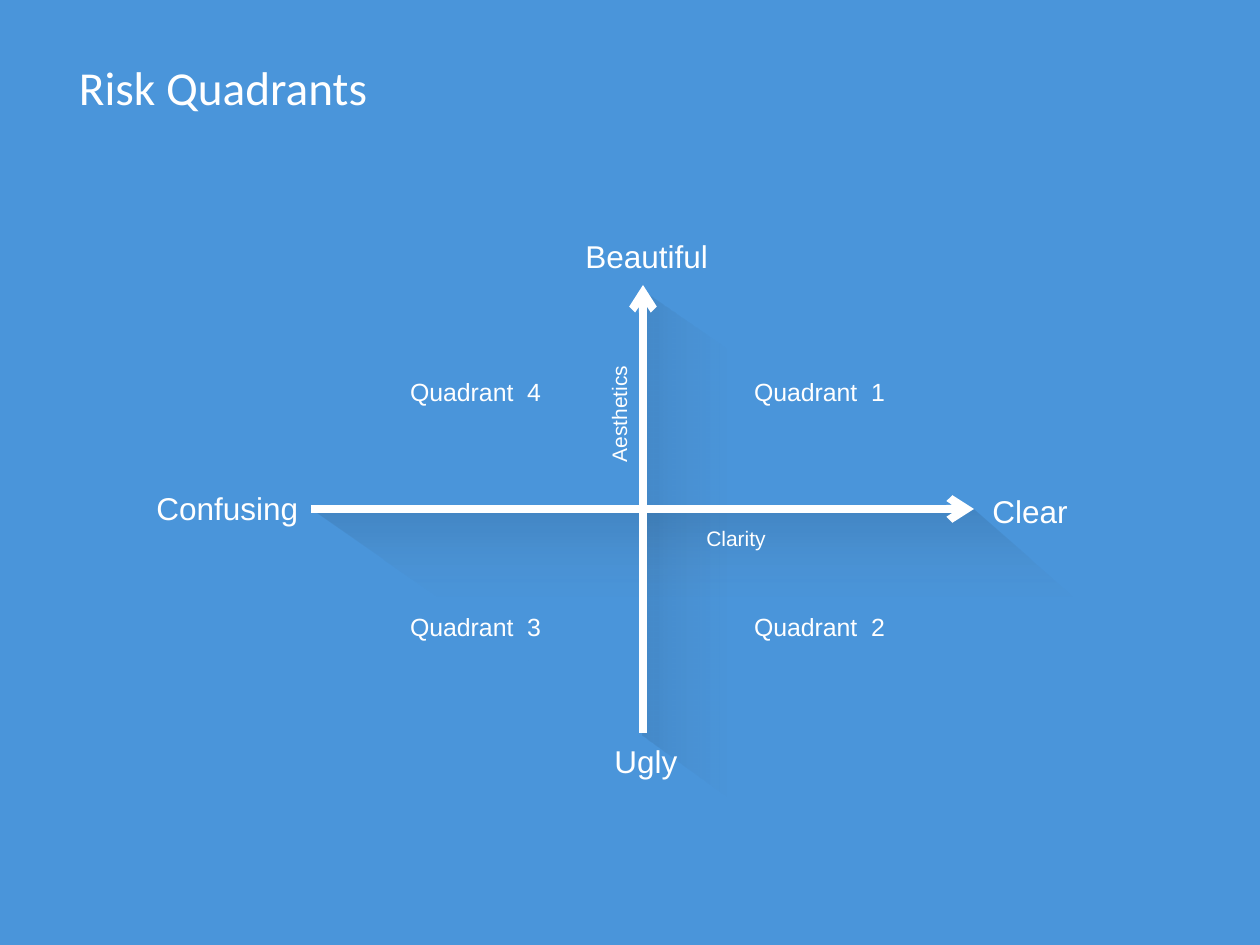
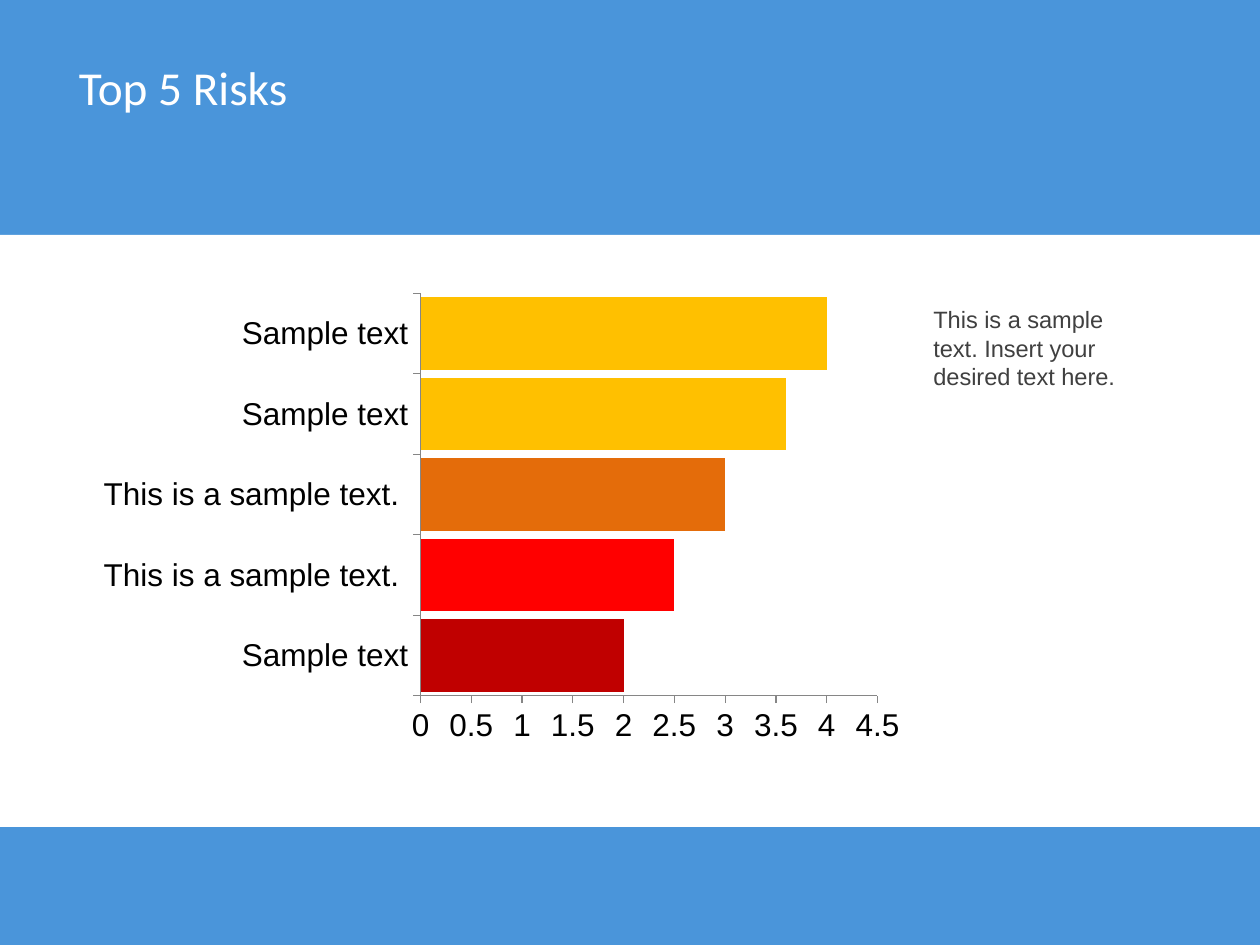
from lxml.etree import SubElement
from pptx import Presentation
from pptx.chart.data import CategoryChartData
from pptx.dml.color import RGBColor
from pptx.enum.chart import XL_CHART_TYPE, XL_TICK_MARK
from pptx.enum.shapes import MSO_CONNECTOR, MSO_SHAPE
from pptx.enum.text import MSO_ANCHOR, MSO_AUTO_SIZE, PP_ALIGN
from pptx.oxml.ns import qn
from pptx.util import Emu, Pt

BLUE = RGBColor(0x4A, 0x95, 0xDA)
WHITE = RGBColor(0xFF, 0xFF, 0xFF)
BLACK = RGBColor(0x00, 0x00, 0x00)
SMOKE = RGBColor(0x6B, 0x6B, 0x6B)
SLATE = RGBColor(0x40, 0x40, 0x40)
GREY = RGBColor(0x86, 0x86, 0x86)
CRIMSON = RGBColor(0xC0, 0x00, 0x00)
RED = RGBColor(0xFF, 0x00, 0x00)
ORANGE = RGBColor(0xE4, 0x6C, 0x0A)
AMBER = RGBColor(0xFF, 0xC0, 0x00)

WIDTH, HEIGHT = 1260, 945
QUADRANTS = [["Quadrant  4", "Quadrant  1"], ["Quadrant  3", "Quadrant  2"]]
ENDS = [
    ("Beautiful", 573, 231, 149),
    ("Ugly", 602, 736, 89),
    ("Confusing", 144, 483, 169),
    ("Clear", 980, 486, 102),
]
RISKS = [
    ("Sample text", 2, CRIMSON),
    ("This is a sample text. ", 2.5, RED),
    ("This is a sample text. ", 3, ORANGE),
    ("Sample text", 3.6, AMBER),
    ("Sample text", 4, AMBER),
]


def px(count):
    """Turn pixels into EMU."""
    return Emu(round(count * 914400 / 126))


def add_text(slide, text, box, size, color=WHITE, font="Arial",
             align=PP_ALIGN.LEFT, wrap=True):
    """Add a text box holding one run and return it."""
    shape = slide.shapes.add_textbox(*map(px, box))
    frame = shape.text_frame
    frame.word_wrap = wrap
    frame.auto_size = MSO_AUTO_SIZE.SHAPE_TO_FIT_TEXT
    para = frame.paragraphs[0]
    para.alignment = align
    run = para.add_run()
    run.text = text
    run.font.size = Pt(size)
    run.font.name = font
    run.font.color.rgb = color
    return shape


def add_slide(deck, title):
    """Add a blue slide with its title."""
    slide = deck.slides.add_slide(deck.slide_layouts[6])
    slide.background.fill.solid()
    slide.background.fill.fore_color.rgb = BLUE
    frame = add_text(slide, title, (63, 38, 1134, 98), 27, font="Calibri").text_frame
    frame.auto_size = MSO_AUTO_SIZE.NONE
    frame.vertical_anchor = MSO_ANCHOR.MIDDLE
    frame.margin_left = frame.margin_right = px(16)
    frame.margin_top = frame.margin_bottom = px(9)
    return slide


def add_shade(slide, points, dark, fade, angle):
    """Add a long shadow that fades from a dark opacity to clear."""
    start, *rest = [(px(x), px(y)) for x, y in points]
    pen = slide.shapes.build_freeform(*start)
    pen.add_line_segments(rest, close=True)
    shape = pen.convert_to_shape()
    shape.shadow.inherit = False
    shape.line.fill.background()
    shape.fill.gradient()
    grad = shape.fill._xPr.find(qn("a:gradFill"))
    for child in list(grad):
        grad.remove(child)
    stops = SubElement(grad, qn("a:gsLst"))
    for place, color, alpha in ((0, BLACK, dark), (fade, SMOKE, 0)):
        stop = SubElement(stops, qn("a:gs"), pos=str(place * 1000))
        tint = SubElement(stop, qn("a:srgbClr"), val=str(color))
        SubElement(tint, qn("a:alpha"), val=str(alpha * 1000))
    SubElement(grad, qn("a:lin"), ang=str(angle * 60000), scaled="0")


def add_arrow(slide, *ends):
    """Add a thick white arrow between two points."""
    arrow = slide.shapes.add_connector(MSO_CONNECTOR.STRAIGHT, *map(px, ends))
    arrow.line.color.rgb = WHITE
    arrow.line.width = Pt(4.5)
    SubElement(arrow.line._get_or_add_ln(), qn("a:tailEnd"), type="arrow")
    SubElement(arrow._element.spPr, qn("a:effectLst"))


def add_band(slide, top, height):
    """Add a white band across the slide."""
    band = slide.shapes.add_shape(MSO_SHAPE.RECTANGLE, *map(px, (0, top, WIDTH, height)))
    band.shadow.inherit = False
    band.fill.solid()
    band.fill.fore_color.rgb = WHITE
    band.line.fill.background()


def style_axis(axis):
    """Give an axis its ticks, line and labels."""
    axis.has_major_gridlines = False
    axis.major_tick_mark = XL_TICK_MARK.OUTSIDE
    axis.minor_tick_mark = XL_TICK_MARK.NONE
    axis.format.line.color.rgb = GREY
    font = axis.tick_labels.font
    font.name = "Arial"
    font.size = Pt(18)
    font.color.rgb = BLACK


def add_bars(slide, risks, box):
    """Add a bar chart with one colour for each risk."""
    names, values, colors = zip(*risks)
    data = CategoryChartData()
    data.categories = names
    data.add_series("Series 1", values)
    chart = slide.shapes.add_chart(
        XL_CHART_TYPE.BAR_STACKED, *map(px, box), data).chart
    chart.has_legend = False
    chart.has_title = False
    chart.font.name = "Calibri"
    chart.font.size = Pt(18)
    chart.font.color.rgb = BLACK
    plot = chart.plots[0]
    plot.vary_by_categories = False
    plot.gap_width = 11
    plot.overlap = 100
    for spot, color in enumerate(colors):
        fill = plot.series[0].points[spot].format.fill
        fill.solid()
        fill.fore_color.rgb = color
    style_axis(chart.category_axis)
    style_axis(chart.value_axis)


def draw_matrix(deck):
    """Draw the quadrants around two crossing arrows."""
    slide = add_slide(deck, "Risk Quadrants")
    add_shade(slide, [(643, 735), (823, 867), (805, 403), (645, 292)], 8, 48, 0)
    add_shade(slide, [(311, 509), (528, 660), (1135, 651), (974, 510)], 10, 59, 90)
    add_arrow(slide, 643, 733, 643, 285)
    add_arrow(slide, 311, 509, 974, 509)
    for row, names in enumerate(QUADRANTS):
        for col, name in enumerate(names):
            box = (396 + 344 * col, 370 + 235 * row, 159, 43)
            add_text(slide, name, box, 14.2, align=PP_ALIGN.CENTER, wrap=False)
    label = add_text(slide, "Aesthetics ", (548, 392, 142, 38), 12, align=PP_ALIGN.CENTER)
    label.rotation = 270
    add_text(slide, "Clarity", (665, 519, 142, 38), 12, align=PP_ALIGN.CENTER)
    for name, left, top, width in ENDS:
        add_text(slide, name, (left, top, width, 50), 18, wrap=False)


def draw_risks(deck):
    """Draw the ranked risks beside a note."""
    slide = add_slide(deck, "Top 5 Risks")
    add_band(slide, 235, 592)
    add_bars(slide, RISKS, (87, 284, 829, 469))
    add_text(slide, "This is a sample text. Insert your desired text here.",
             (921, 299, 244, 98), 13.5, SLATE)


def main():
    """Build and save the deck."""
    deck = Presentation()
    deck.slide_width, deck.slide_height = px(WIDTH), px(HEIGHT)
    draw_matrix(deck)
    draw_risks(deck)
    deck.save("out.pptx")


if __name__ == "__main__":
    main()
